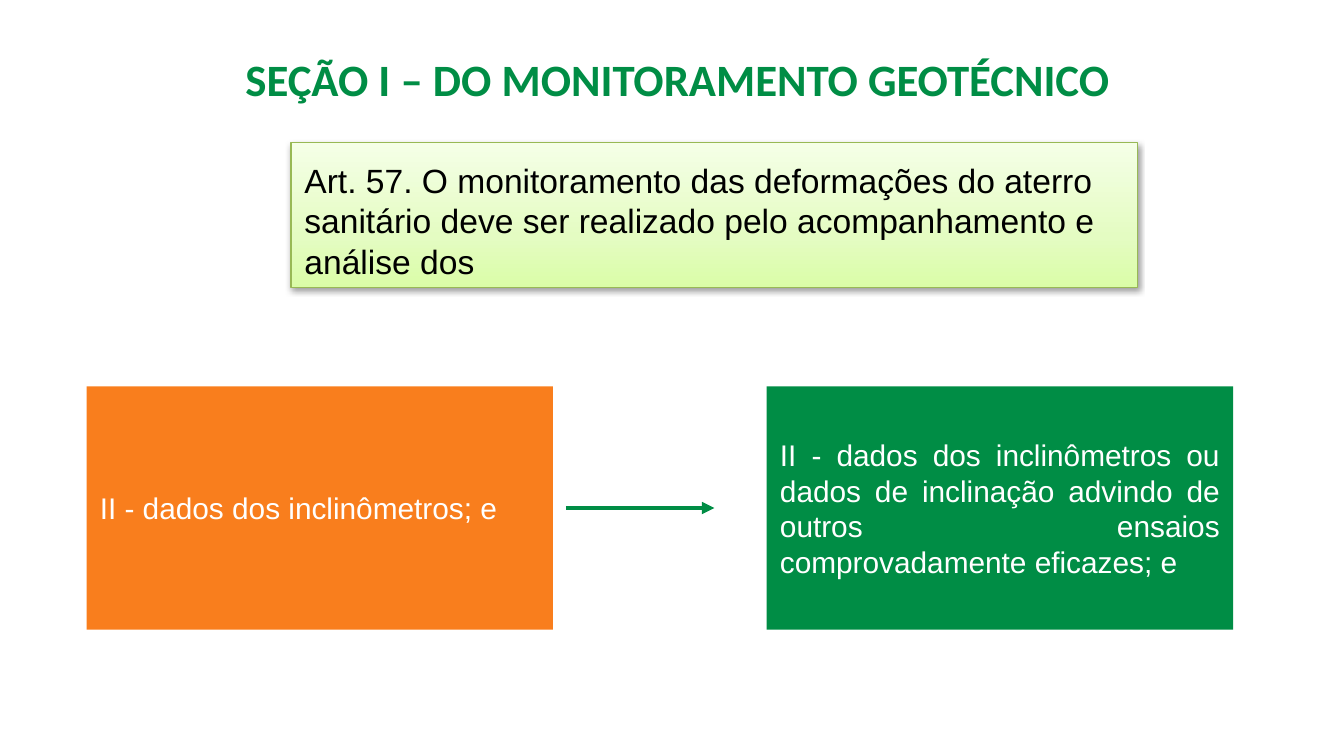
import copy
from dataclasses import dataclass

import lxml.etree
import pptx
import pptx.dml.color
import pptx.enum.shapes
import pptx.enum.text
import pptx.oxml.ns
import pptx.util

RGBColor = pptx.dml.color.RGBColor
Align = pptx.enum.text.PP_ALIGN
Anchor = pptx.enum.text.MSO_ANCHOR
qn = pptx.oxml.ns.qn

GREEN = RGBColor(0x00, 0x8D, 0x45)
ORANGE = RGBColor(0xF9, 0x7E, 0x1D)
WHITE = RGBColor(0xFF, 0xFF, 0xFF)
BLACK = RGBColor(0x00, 0x00, 0x00)
LIME_BORDER = RGBColor(0x98, 0xB9, 0x55)
LIME_STOPS = [
    (0, RGBColor(0xDA, 0xFD, 0xA7)),
    (0.35, RGBColor(0xE4, 0xFC, 0xC2)),
    (1, RGBColor(0xF5, 0xFF, 0xE7)),
]

PIXELS_PER_INCH = 200
SECTION_LAYOUT = 2
BOX_TOP, BOX_WIDTH, BOX_HEIGHT = 575, 694, 362


@dataclass(frozen=True)
class TextStyle:
    font: str
    size: int
    color: RGBColor
    align: Align
    anchor: Anchor
    bold: bool = False


@dataclass(frozen=True)
class Clause:
    left: int
    fill: RGBColor
    text: str


TITLE_STYLE = TextStyle("Calibri", 24, GREEN, Align.CENTER, Anchor.TOP, True)
ARTICLE_STYLE = TextStyle("Arial", 18, BLACK, Align.LEFT, Anchor.BOTTOM)
CLAUSE_STYLE = TextStyle("Arial", 16, WHITE, Align.JUSTIFY, Anchor.MIDDLE)

CLAUSES = [
    Clause(129, ORANGE, "II - dados dos inclinômetros; e"),
    Clause(
        1141,
        GREEN,
        "II - dados dos inclinômetros ou dados de inclinação advindo de "
        "outros ensaios comprovadamente eficazes; e",
    ),
]


def px(length: int) -> pptx.util.Emu:
    return pptx.util.Emu(length * 914400 // PIXELS_PER_INCH)


def place(shape, left: int, top: int, width: int, height: int) -> None:
    shape.left, shape.top = px(left), px(top)
    shape.width, shape.height = px(width), px(height)


def write_text(shape, text: str, style: TextStyle) -> None:
    frame = shape.text_frame
    frame.text = text
    frame.word_wrap = True
    frame.auto_size = pptx.enum.text.MSO_AUTO_SIZE.NONE
    frame.vertical_anchor = style.anchor
    paragraph = frame.paragraphs[0]
    paragraph.alignment = style.align
    paragraph.space_before = pptx.util.Pt(0)
    font = paragraph.font
    font.name = style.font
    font.size = pptx.util.Pt(style.size)
    font.bold = style.bold
    font.color.rgb = style.color


def fill_article(shape) -> None:
    shape.fill.gradient()
    shape.fill.gradient_angle = 90
    stop_list = shape._element.spPr.find(".//" + qn("a:gsLst"))
    stop_list.append(copy.deepcopy(stop_list[-1]))
    for stop, (position, color) in zip(shape.fill.gradient_stops, LIME_STOPS):
        stop.position = position
        stop.color.rgb = color
    shape.line.color.rgb = LIME_BORDER
    shape.line.width = pptx.util.Pt(0.75)


def add_shadow(shape) -> None:
    shape.shadow.inherit = False
    effects = shape._element.spPr.find(qn("a:effectLst"))
    shadow = lxml.etree.SubElement(
        effects, qn("a:outerShdw"),
        blurRad="40000", dist="20000", dir="5400000", rotWithShape="0",
    )
    color = lxml.etree.SubElement(shadow, qn("a:srgbClr"), val=str(BLACK))
    lxml.etree.SubElement(color, qn("a:alpha"), val="38000")


def add_clause(slide, clause: Clause) -> None:
    shape = slide.shapes.add_shape(
        pptx.enum.shapes.MSO_SHAPE.RECTANGLE,
        px(clause.left), px(BOX_TOP), px(BOX_WIDTH), px(BOX_HEIGHT),
    )
    shape.shadow.inherit = False
    shape.fill.solid()
    shape.fill.fore_color.rgb = clause.fill
    shape.line.fill.background()
    write_text(shape, clause.text, CLAUSE_STYLE)


def add_arrow(slide, start: int, end: int, y: int) -> None:
    arrow = slide.shapes.add_connector(
        pptx.enum.shapes.MSO_CONNECTOR.STRAIGHT, px(start), px(y), px(end), px(y)
    )
    arrow.line.color.rgb = GREEN
    arrow.line.width = pptx.util.Pt(2.25)
    lxml.etree.SubElement(arrow.line._get_or_add_ln(), qn("a:tailEnd"), type="triangle")
    lxml.etree.SubElement(arrow._element.spPr, qn("a:effectLst"))


def main() -> None:
    presentation = pptx.Presentation()
    presentation.slide_width, presentation.slide_height = px(2000), px(1125)
    slide = presentation.slides.add_slide(presentation.slide_layouts[SECTION_LAYOUT])

    title = slide.shapes.title
    place(title, 331, 67, 1354, 224)
    write_text(title, "SEÇÃO I – DO MONITORAMENTO GEOTÉCNICO", TITLE_STYLE)

    article = slide.placeholders[1]
    place(article, 433, 212, 1260, 216)
    fill_article(article)
    add_shadow(article)
    write_text(
        article,
        "Art. 57. O monitoramento das deformações do aterro sanitário deve ser "
        "realizado pelo acompanhamento e análise dos",
        ARTICLE_STYLE,
    )

    for clause in CLAUSES:
        add_clause(slide, clause)
    add_arrow(slide, 842, 1063, 756)

    presentation.save("out.pptx")


if __name__ == "__main__":
    main()
